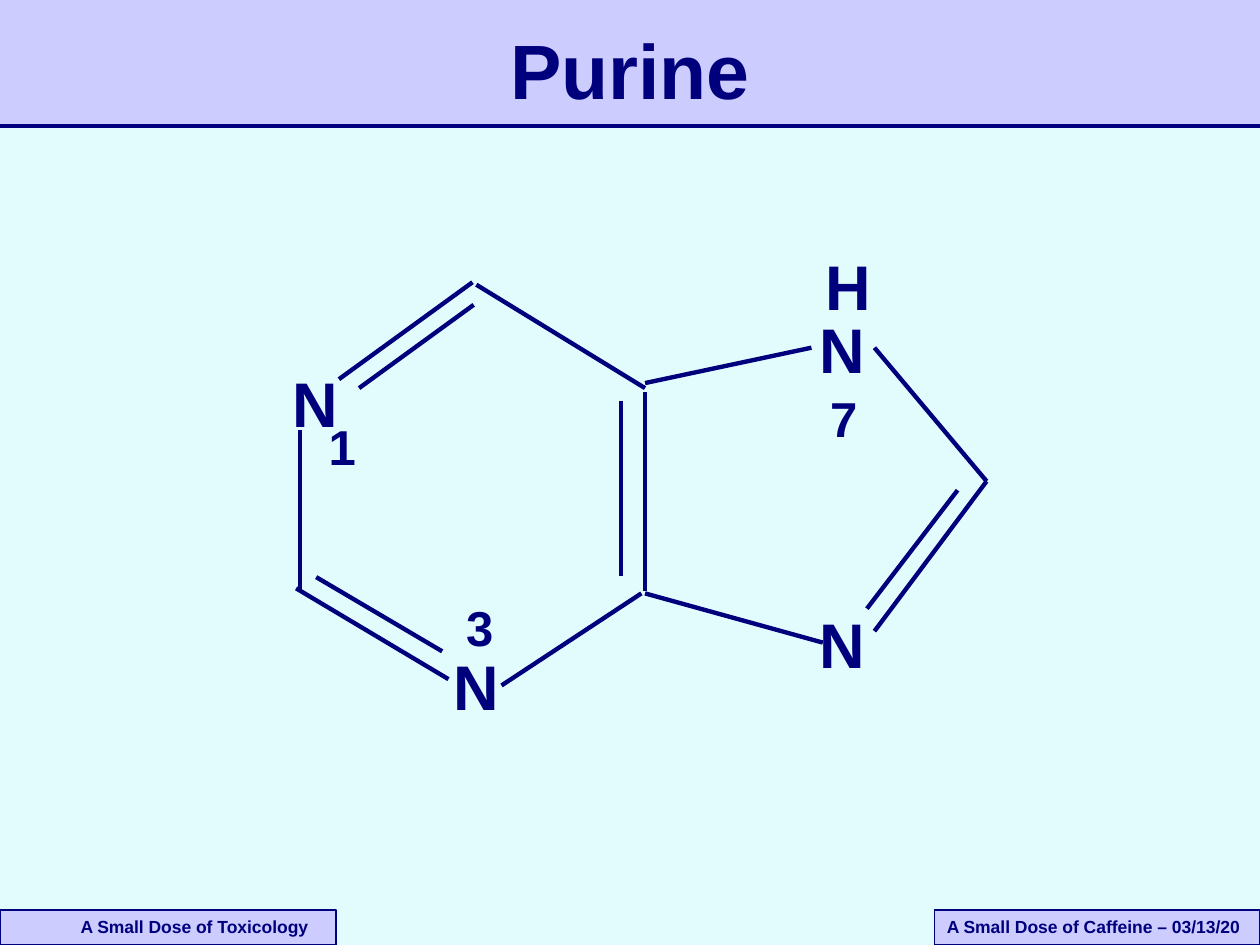
from dataclasses import dataclass

from lxml.etree import SubElement
from pptx import Presentation
from pptx.dml.color import RGBColor
from pptx.enum.shapes import MSO_CONNECTOR as CONN, MSO_SHAPE as SHAPE
from pptx.enum.text import MSO_ANCHOR as ANCHOR, PP_ALIGN as ALIGN
from pptx.oxml.ns import qn
from pptx.util import Pt


@dataclass(frozen=True)
class Theme:
    font: str = "Arial"
    navy: RGBColor = RGBColor(0x00, 0x00, 0x7D)
    lilac: RGBColor = RGBColor(0xCC, 0xCC, 0xFF)
    ice: RGBColor = RGBColor(0xE2, 0xFC, 0xFE)
    title: int = 44
    atom: int = 36
    number: int = 28
    footer: int = 10
    rule: float = 2
    bond: float = 2.5
    border: float = 0.75


T = Theme()
W, H = 720, 540

# Bonds and labels, in points from the top left of the molecule
BONDS = [
    # six-membered ring
    (33.7, 78.7, 110, 23.3),
    (112.2, 24.7, 208.6, 83.8),
    (208.6, 85.9, 208.6, 199.7),
    (11.4, 107.5, 11.4, 199),
    (9.2, 198.2, 96.3, 250.1),
    (126.6, 253.7, 206.5, 201.1),
    # five-membered ring
    (303.7, 60.7, 208.6, 80.9),
    (339.7, 60.7, 403.8, 137),
    (339.7, 222.7, 403.8, 137),
    (310.2, 229.2, 208.6, 201.1),
    # second strokes of the double bonds
    (45.2, 36.2 + 47.6, 110.7, 36.2),
    (92.7, 234.2, 20.7, 191.8),
    (195, 91, 195, 191),
    (335.4, 209.8, 387.2, 142.1),
]
ATOMS = [
    ("N", 0, 66.5),
    ("N", 92, 228.5),
    ("N", 301.5, 204.7),
    ("N", 301.5, 36.2),
    ("H", 304.4, 0.2),
]
NUMBERS = [("1", 20.7, 96.7), ("3", 99.2, 199.7), ("7", 307.3, 80.2)]


def add_line(s, x1, y1, x2, y2, width):
    ln = s.shapes.add_connector(CONN.STRAIGHT, Pt(x1), Pt(y1), Pt(x2), Pt(y2))
    ln.line.color.rgb = T.navy
    ln.line.width = Pt(width)
    SubElement(ln._element.spPr, qn("a:effectLst"))


def add_rect(s, box, border=None):
    sp = s.shapes.add_shape(SHAPE.RECTANGLE, *map(Pt, box))
    sp.shadow.inherit = False
    sp.fill.solid()
    sp.fill.fore_color.rgb = T.lilac
    if border:
        sp.line.color.rgb = T.navy
        sp.line.width = Pt(border)
    else:
        sp.line.fill.background()
    return sp


def write(sp, text, size, align=ALIGN.LEFT, anchor=ANCHOR.TOP, wrap=True):
    tf = sp.text_frame
    tf.word_wrap = wrap
    tf.vertical_anchor = anchor
    p = tf.paragraphs[0]
    p.alignment = align
    r = p.add_run()
    r.text = text
    r.font.name = T.font
    r.font.size = Pt(size)
    r.font.bold = True
    r.font.color.rgb = T.navy
    return tf


def add_header(s, box, text):
    x, y, w, h = box
    add_rect(s, box)
    add_line(s, x, y + h, x + w, y + h, T.rule)
    sp = s.shapes.add_textbox(Pt(x + 54), Pt(y + 9), Pt(w - 108), Pt(60))
    write(sp, text, T.title, ALIGN.CENTER, ANCHOR.MIDDLE)


def add_footer(s, box, text, indent=7.2):
    tf = write(add_rect(s, box, T.border), text, T.footer)
    tf.margin_left = Pt(indent)


def add_molecule(s, box):
    x, y = box[:2]
    for x1, y1, x2, y2 in BONDS:
        add_line(s, x + x1, y + y1, x + x2, y + y2, T.bond)
    for labels, size, w, h in ((ATOMS, T.atom, 40.3, 50.4),
                               (NUMBERS, T.number, 29.5, 40.3)):
        for text, dx, dy in labels:
            sp = s.shapes.add_textbox(Pt(x + dx), Pt(y + dy), Pt(w), Pt(h))
            write(sp, text, size, wrap=False)


def main():
    prs = Presentation()
    prs.slide_width, prs.slide_height = Pt(W), Pt(H)
    s = prs.slides.add_slide(prs.slide_layouts[6])
    s.background.fill.solid()
    s.background.fill.fore_color.rgb = T.ice

    add_header(s, (0, 0, W, 72), "Purine")
    add_footer(s, (0, 520, 192, 20), "A Small Dose of Toxicology", indent=46)
    add_footer(s, (534, 520, 186, 20), "A Small Dose of Caffeine – 03/13/20")
    add_molecule(s, (160, 138, 404, 280))
    prs.save("out.pptx")


if __name__ == "__main__":
    main()
